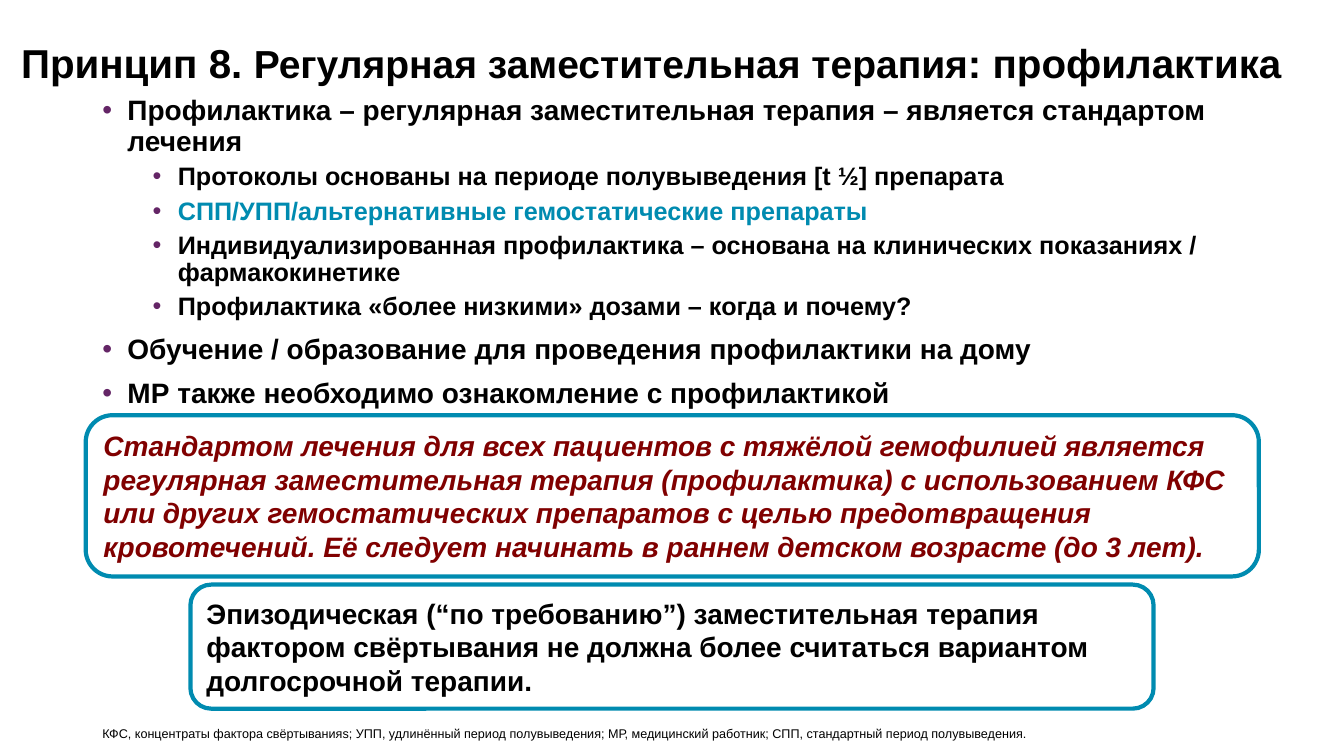
from lxml import etree
from pptx import Presentation
from pptx.dml.color import RGBColor
from pptx.enum.shapes import MSO_SHAPE
from pptx.enum.text import MSO_ANCHOR, PP_ALIGN
from pptx.oxml.ns import qn
from pptx.util import Pt

ROUNDED = MSO_SHAPE.ROUNDED_RECTANGLE
TOP, MIDDLE, BOTTOM = MSO_ANCHOR.TOP, MSO_ANCHOR.MIDDLE, MSO_ANCHOR.BOTTOM
LEFT = PP_ALIGN.LEFT

COLORS = {"black": "000000", "teal": "008BB0", "plum": "642566", "maroon": "800000"}

deck = Presentation()
deck.slide_width, deck.slide_height = Pt(960), Pt(540)
page = deck.slides.add_slide(deck.slide_layouts[6])


def add_text_frame(left, top, width, height, anchor):
    box = page.shapes.add_textbox(Pt(left), Pt(top), Pt(width), Pt(height))
    box.text_frame.word_wrap = True
    box.text_frame.vertical_anchor = anchor
    return box.text_frame


def set_font(font, size, color="black", bold=True, italic=False):
    font.name = "Arial"
    font.size = Pt(size)
    font.bold = bold
    font.italic = italic
    font.color.rgb = RGBColor.from_string(COLORS[color])


# Title
para = add_text_frame(8, 16, 944, 62, MIDDLE).paragraphs[0]
para.line_spacing = 0.9
for text, size in [
    ("Принцип 8. ", 28.8),
    ("Регулярная заместительная терапия", 27.9),
    (": профилактика", 28.8),
]:
    span = para.add_run()
    span.text = text
    set_font(span.font, size)

# Bulleted list: level, text, colour
BULLETS = [
    (0, "Профилактика – регулярная заместительная терапия – является стандартом лечения", "black"),
    (1, "Протоколы основаны на периоде полувыведения [t ½] препарата", "black"),
    (1, "СПП/УПП/альтернативные гемостатические препараты", "teal"),
    (1, "Индивидуализированная профилактика – основана на клинических показаниях / фармакокинетике", "black"),
    (1, "Профилактика «более низкими» дозами – когда и почему?", "black"),
    (0, "Обучение / образование для проведения профилактики на дому", "black"),
    (0, "МР также необходимо ознакомление с профилактикой", "black"),
]
frame = add_text_frame(66, 65.5, 828, 364, TOP)
for index, (level, text, color) in enumerate(BULLETS):
    para = frame.add_paragraph() if index else frame.paragraphs[0]
    para.text = text
    para.level = level
    para.line_spacing = 0.9
    if index:
        para.space_before = Pt(5 if level else 10)
    properties = para._p.get_or_add_pPr()
    properties.set("marL", str(Pt(18 + 36 * level)))
    properties.set("indent", str(Pt(-18)))
    bullet_color = etree.SubElement(properties, qn("a:buClr"))
    etree.SubElement(bullet_color, qn("a:srgbClr"), val=COLORS["plum"])
    etree.SubElement(properties, qn("a:buFont"), typeface="Arial")
    etree.SubElement(properties, qn("a:buChar"), char="•")
    set_font(para.font, 18 if level else 20, color)

# Abbreviations
frame = add_text_frame(66, 500.4, 781, 28.8, BOTTOM)
frame.margin_bottom = 0
para = frame.paragraphs[0]
para.text = (
    "КФС, концентраты фактора свёртыванияs; УПП, удлинённый период полувыведения; "
    "МР, медицинский работник; СПП, стандартный период полувыведения."
)
para.line_spacing = 0.9
set_font(para.font, 9, bold=False)

# Framed statements: left, top, width, height, text, colour, italic
STATEMENTS = [
    (136, 417.6, 688, 88.6,
     "Эпизодическая (“по требованию”) заместительная терапия фактором свёртывания "
     "не должна более считаться вариантом долгосрочной терапии.", "black", False),
    (61.2, 296.6, 838, 115.2,
     "Стандартом лечения для всех пациентов с тяжёлой гемофилией является регулярная "
     "заместительная терапия (профилактика) с использованием КФС или других "
     "гемостатических препаратов с целью предотвращения кровотечений. "
     "Её следует начинать в раннем детском возрасте (до 3 лет).", "maroon", True),
]
for left, top, width, height, text, color, italic in STATEMENTS:
    box = page.shapes.add_shape(ROUNDED, Pt(left), Pt(top), Pt(width), Pt(height))
    box.shadow.inherit = False
    box.fill.background()
    box.line.color.rgb = RGBColor.from_string(COLORS["teal"])
    box.line.width = Pt(3)
    box.text_frame.word_wrap = True
    box.text_frame.vertical_anchor = MIDDLE
    para = box.text_frame.paragraphs[0]
    para.text = text
    para.alignment = LEFT
    set_font(para.font, 20, color, italic=italic)

deck.save("out.pptx")
